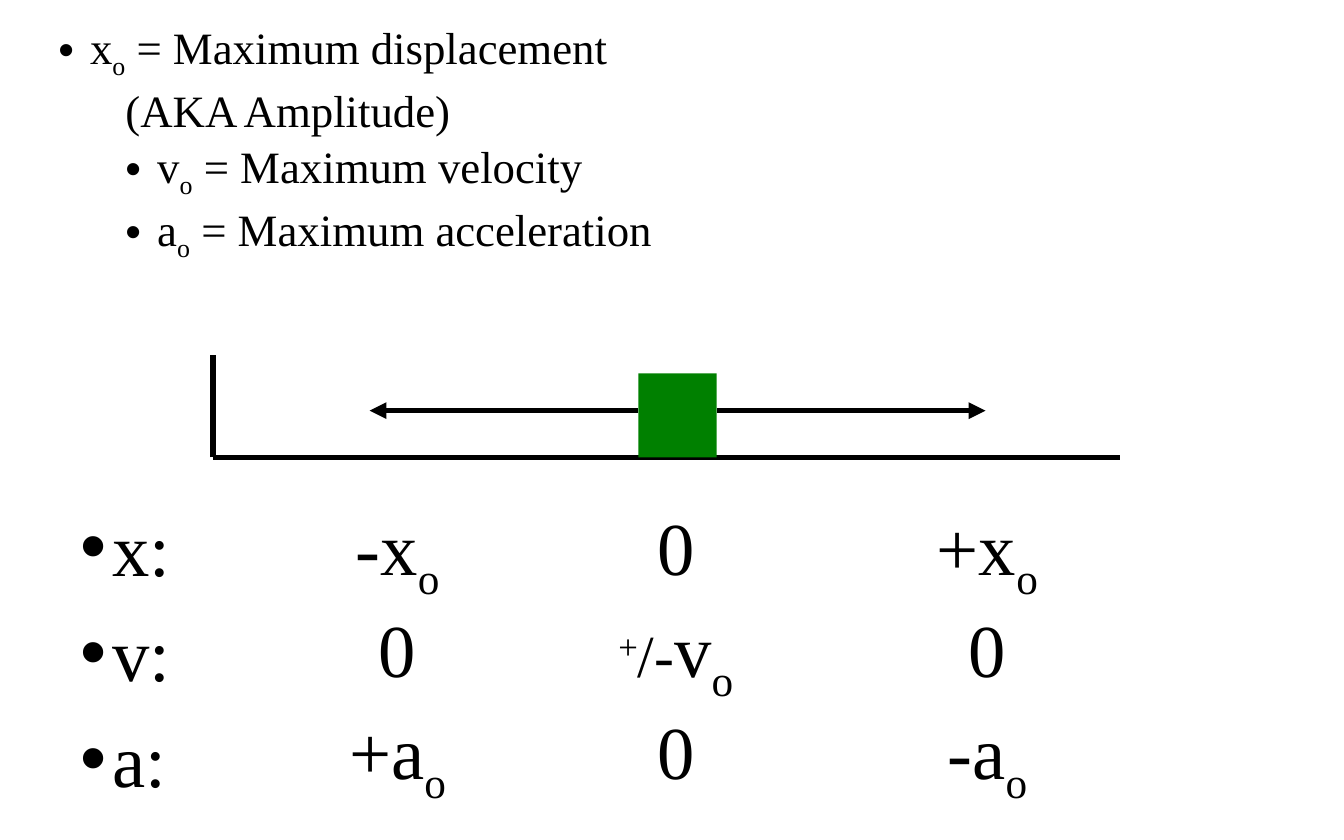
from typing import NamedTuple

from lxml.etree import SubElement
from pptx import Presentation
from pptx.dml.color import RGBColor
from pptx.enum.shapes import MSO_CONNECTOR, MSO_SHAPE
from pptx.enum.text import MSO_ANCHOR, MSO_AUTO_SIZE, PP_ALIGN
from pptx.oxml.ns import qn
from pptx.util import Pt

COLORS = {"ink": "000000", "block": "008000", "background": "FFFFFF"}
FONT = "Times New Roman"
LIST_SIZE, VALUE_SIZE, SIGN_SIZE = 24, 40, 32
VALUES_TOP, ROW_STEP, ROW_GAP = 260, 54.6, 8.6
CELL_WIDTH = 120
COLUMN_CENTERS = (213, 362, 529)


class Piece(NamedTuple):
    text: str
    baseline: int = 0  # percent: negative for subscript
    size: float | None = None


class Item(NamedTuple):
    pieces: tuple[Piece, ...]
    level: int = 0
    margin: float = 17
    indent: float = -17
    bullet: bool = True


class Line(NamedTuple):
    start: tuple[float, float]
    end: tuple[float, float]
    arrow: bool = False


def with_subscript(before: str, after: str = "") -> tuple[Piece, ...]:
    pieces = (Piece(before), Piece("o", -25), Piece(after))
    return tuple(piece for piece in pieces if piece.text)


DEFINITIONS = (
    Item(with_subscript("x", " = Maximum displacement")),
    Item((Piece("(AKA Amplitude)"),), 1, 36, 0, False),
    Item(with_subscript("v", " = Maximum velocity"), 1, 53),
    Item(with_subscript("a", " = Maximum acceleration"), 1, 53),
)
LABELS = tuple(Item((Piece(label),)) for label in ("x:", "v:", "a:"))
ZERO = (Piece("0"),)
PLUS_MINUS_V = (Piece("+", 30, SIGN_SIZE), Piece("/-", 0, SIGN_SIZE),
                *with_subscript("v"))
VALUES = (
    (with_subscript("-x"), ZERO, with_subscript("+x")),
    (ZERO, PLUS_MINUS_V, ZERO),
    (with_subscript("+a"), ZERO, with_subscript("-a")),
)
LINES = (
    Line((114, 245), (600, 245)),
    Line((114, 245), (114, 190)),
    Line((384, 220), (528, 220), True),
    Line((342, 220), (198, 220), True),
)


def color(name: str) -> RGBColor:
    return RGBColor.from_string(COLORS[name])


def prepare_frame(text_frame, top_inset: float) -> None:
    text_frame.word_wrap = True
    text_frame.auto_size = MSO_AUTO_SIZE.NONE
    text_frame.vertical_anchor = MSO_ANCHOR.TOP
    text_frame.margin_top = Pt(top_inset)


def write_pieces(paragraph, pieces: tuple[Piece, ...], size: float) -> None:
    for piece in pieces:
        run = paragraph.add_run()
        run.text = piece.text
        run.font.name = FONT
        run.font.size = Pt(piece.size or size)
        run.font.color.rgb = color("ink")
        if piece.baseline:
            run.font._element.set("baseline", str(piece.baseline * 1000))


def fill_list(placeholder, box: tuple[float, ...], items: tuple[Item, ...],
              size: float, gap: float, top_inset: float) -> None:
    placeholder.left, placeholder.top, placeholder.width, placeholder.height = map(Pt, box)
    text_frame = placeholder.text_frame
    prepare_frame(text_frame, top_inset)
    for index, item in enumerate(items):
        paragraph = text_frame.paragraphs[0] if index == 0 else text_frame.add_paragraph()
        paragraph.level = item.level
        paragraph.space_before = Pt(0)
        paragraph.space_after = Pt(gap)
        properties = paragraph._p.get_or_add_pPr()
        properties.set("marL", str(Pt(item.margin)))
        properties.set("indent", str(Pt(item.indent)))
        if item.bullet:
            SubElement(properties, qn("a:buChar")).set("char", "•")
        else:
            SubElement(properties, qn("a:buNone"))
        write_pieces(paragraph, item.pieces, size)


def add_value(slide, center: float, row: int, pieces: tuple[Piece, ...]) -> None:
    shape = slide.shapes.add_textbox(
        Pt(center - CELL_WIDTH / 2), Pt(VALUES_TOP + row * ROW_STEP),
        Pt(CELL_WIDTH), Pt(ROW_STEP))
    prepare_frame(shape.text_frame, ROW_GAP)
    paragraph = shape.text_frame.paragraphs[0]
    paragraph.alignment = PP_ALIGN.CENTER
    write_pieces(paragraph, pieces, VALUE_SIZE)


def add_line(slide, line: Line) -> None:
    connector = slide.shapes.add_connector(
        MSO_CONNECTOR.STRAIGHT, *map(Pt, line.start + line.end))
    connector.line.color.rgb = color("ink")
    connector.line.width = Pt(3)
    if line.arrow:
        SubElement(connector.line._get_or_add_ln(), qn("a:tailEnd")).set("type", "triangle")
    SubElement(connector._element.spPr, qn("a:effectLst"))


def add_block(slide) -> None:
    shape = slide.shapes.add_shape(MSO_SHAPE.RECTANGLE, Pt(342), Pt(200), Pt(42), Pt(45))
    shape.shadow.inherit = False
    shape.fill.solid()
    shape.fill.fore_color.rgb = color("block")
    shape.line.fill.background()


def main() -> None:
    presentation = Presentation()
    presentation.slide_width, presentation.slide_height = Pt(720), Pt(450)
    two_content_layout = presentation.slide_layouts[3]
    slide = presentation.slides.add_slide(two_content_layout)
    slide.background.fill.solid()
    slide.background.fill.fore_color.rgb = color("background")
    title, definitions, labels = slide.placeholders
    title._element.getparent().remove(title._element)

    fill_list(definitions, (24, 5, 666, 124), DEFINITIONS, LIST_SIZE, 1, 5.6)
    for line in LINES[:2]:
        add_line(slide, line)
    add_block(slide)
    for line in LINES[2:]:
        add_line(slide, line)
    fill_list(labels, (36, VALUES_TOP, 90, 3 * ROW_STEP + ROW_GAP), LABELS,
              VALUE_SIZE, ROW_GAP, ROW_GAP)
    for row, values in enumerate(VALUES):
        for center, pieces in zip(COLUMN_CENTERS, values):
            add_value(slide, center, row, pieces)
    presentation.save("out.pptx")


if __name__ == "__main__":
    main()
